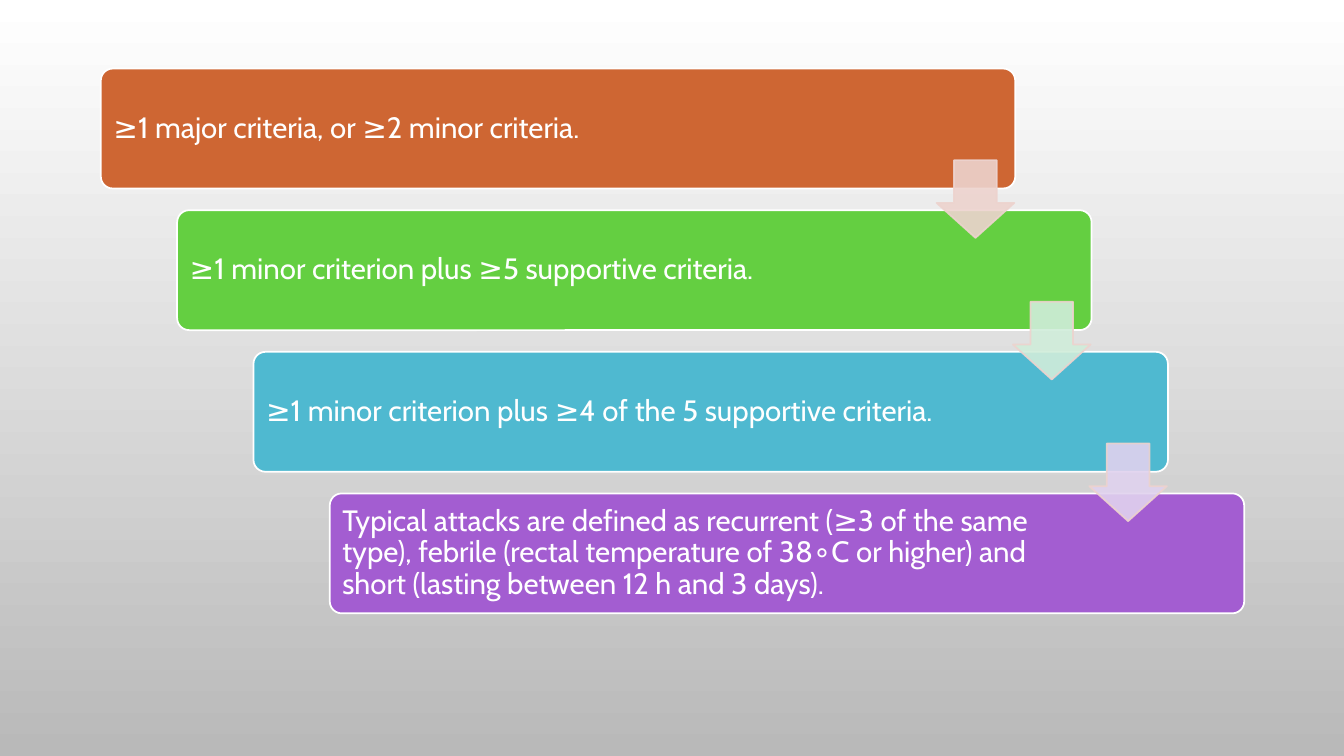
from lxml import etree
from pptx import Presentation
from pptx.dml.color import RGBColor
from pptx.enum import shapes, text
from pptx.oxml.ns import qn
from pptx.util import Inches, Pt

HUES = {
    "white": "FFFFFF", "gray": "B9B9B9", "rust": "CE6633", "green": "64CF41",
    "blue": "4FB9D0", "plum": "A35DD1", "rose": "EDD3CE", "mint": "D0EDDA",
    "lilac": "E0D2EE",
}
STEPS = [
    ("rust", "rose", "≥1 major criteria, or ≥2 minor criteria."),
    ("green", "mint", "≥1 minor criterion plus ≥5 supportive criteria."),
    ("blue", "lilac", "≥1 minor criterion plus ≥4 of the 5 supportive criteria."),
    ("plum", None, "Typical attacks are defined as recurrent (≥3 of the same type), "
     "febrile (rectal temperature of 38∘C or higher) and short "
     "(lasting between 12 h and 3 days)."),
]
LEFT, TOP = 1, 0.68
STEP_X, STEP_Y = 0.757, 1.405


class Deck:
    """Holds the style and the current slide, and draws each kind of element."""

    def __init__(self):
        self.prs = Presentation()
        self.prs.slide_width = Inches(13.33)
        self.prs.slide_height = Inches(7.5)
        self.slide = self.prs.slides.add_slide(self.prs.slide_layouts[6])
        self.font, self.size = "Cabin", Pt(21)

    def hue(self, name):
        return RGBColor.from_string(HUES[name])

    def back(self, start, end):
        fill = self.slide.background.fill
        fill.gradient()
        fill.gradient_angle = 270
        for stop, name in zip(fill.gradient_stops, (start, end)):
            stop.color.rgb = self.hue(name)

    def shape(self, kind, x, y, w, h, fill, line):
        item = self.slide.shapes.add_shape(
            kind, Inches(x), Inches(y), Inches(w), Inches(h))
        item.shadow.inherit = False
        item.fill.solid()
        item.fill.fore_color.rgb = self.hue(fill)
        item.line.color.rgb = self.hue(line)
        item.line.width = Pt(1.25)
        return item

    def card(self, x, y, fill, words):
        item = self.shape(shapes.MSO_SHAPE.ROUNDED_RECTANGLE,
                          x, y, 9.07, 1.19, fill, "white")
        item.adjustments[0] = 0.1
        frame = item.text_frame
        frame.word_wrap = True
        frame.vertical_anchor = text.MSO_ANCHOR.MIDDLE
        frame.margin_left = Inches(0.09)
        frame.margin_right = Inches(1.63)
        frame.margin_top = frame.margin_bottom = Inches(0.09)
        para = frame.paragraphs[0]
        para.alignment = text.PP_ALIGN.LEFT
        para.line_spacing = 0.9
        run = para.add_run()
        run.text = words
        run.font.name, run.font.size = self.font, self.size
        run.font.color.rgb = self.hue("white")

    def arrow(self, x, y, fill):
        item = self.shape(shapes.MSO_SHAPE.DOWN_ARROW,
                          x, y, 0.77, 0.77, fill, "rose")
        item.adjustments[0], item.adjustments[1] = 0.55, 0.45
        for tone in item._element.spPr.iter(qn("a:srgbClr")):
            etree.SubElement(tone, qn("a:alpha"), val="90000")


def main():
    deck = Deck()
    deck.back("white", "gray")
    spots = [(LEFT + i * STEP_X, TOP + i * STEP_Y) for i in range(len(STEPS))]
    for (x, y), (fill, _, words) in zip(spots, STEPS):
        deck.card(x, y, fill, words)
    for (x, y), (_, tint, _) in zip(spots, STEPS):
        if tint:
            deck.arrow(x + 8.29, y + 0.91, tint)
    deck.prs.save("out.pptx")


if __name__ == "__main__":
    main()
